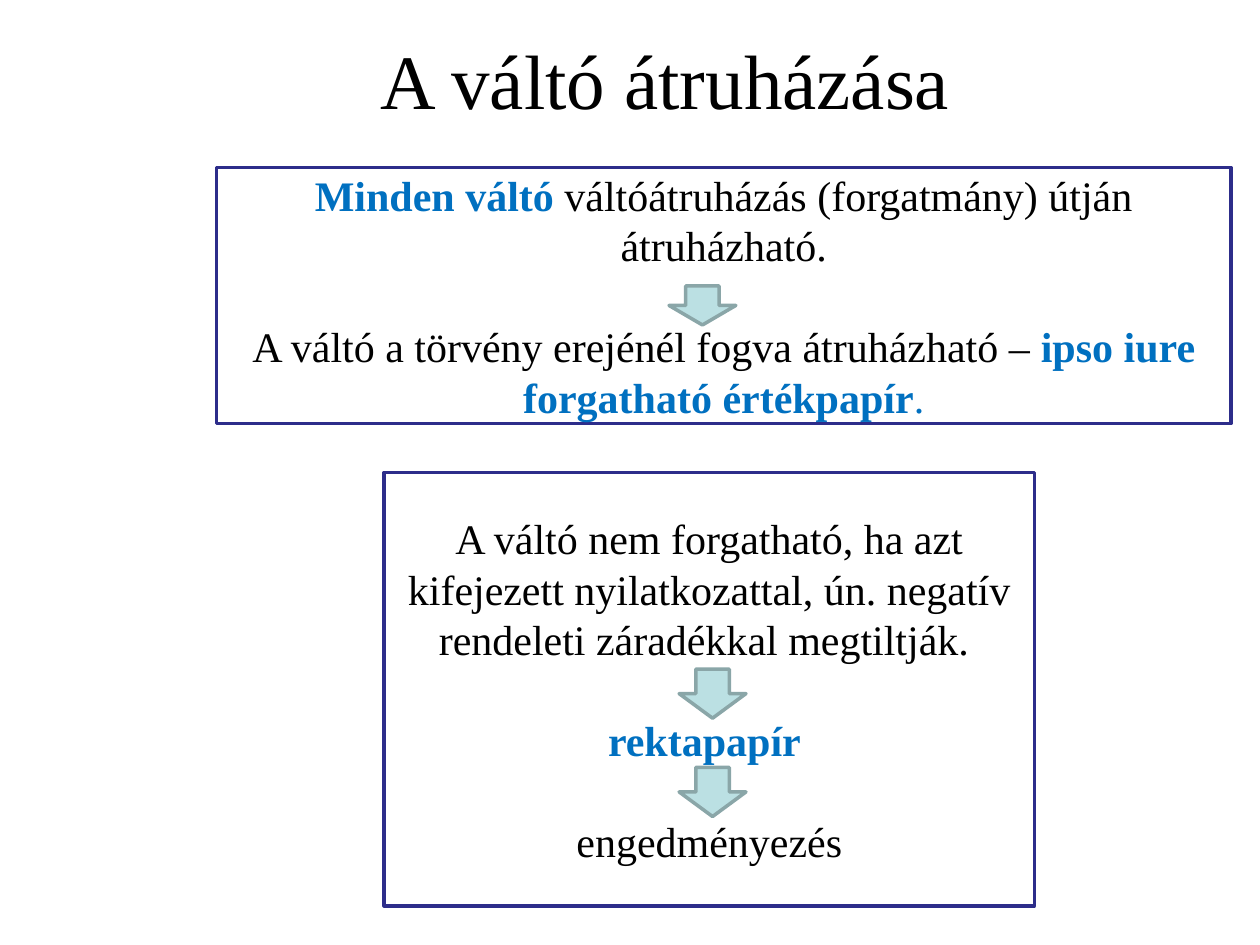
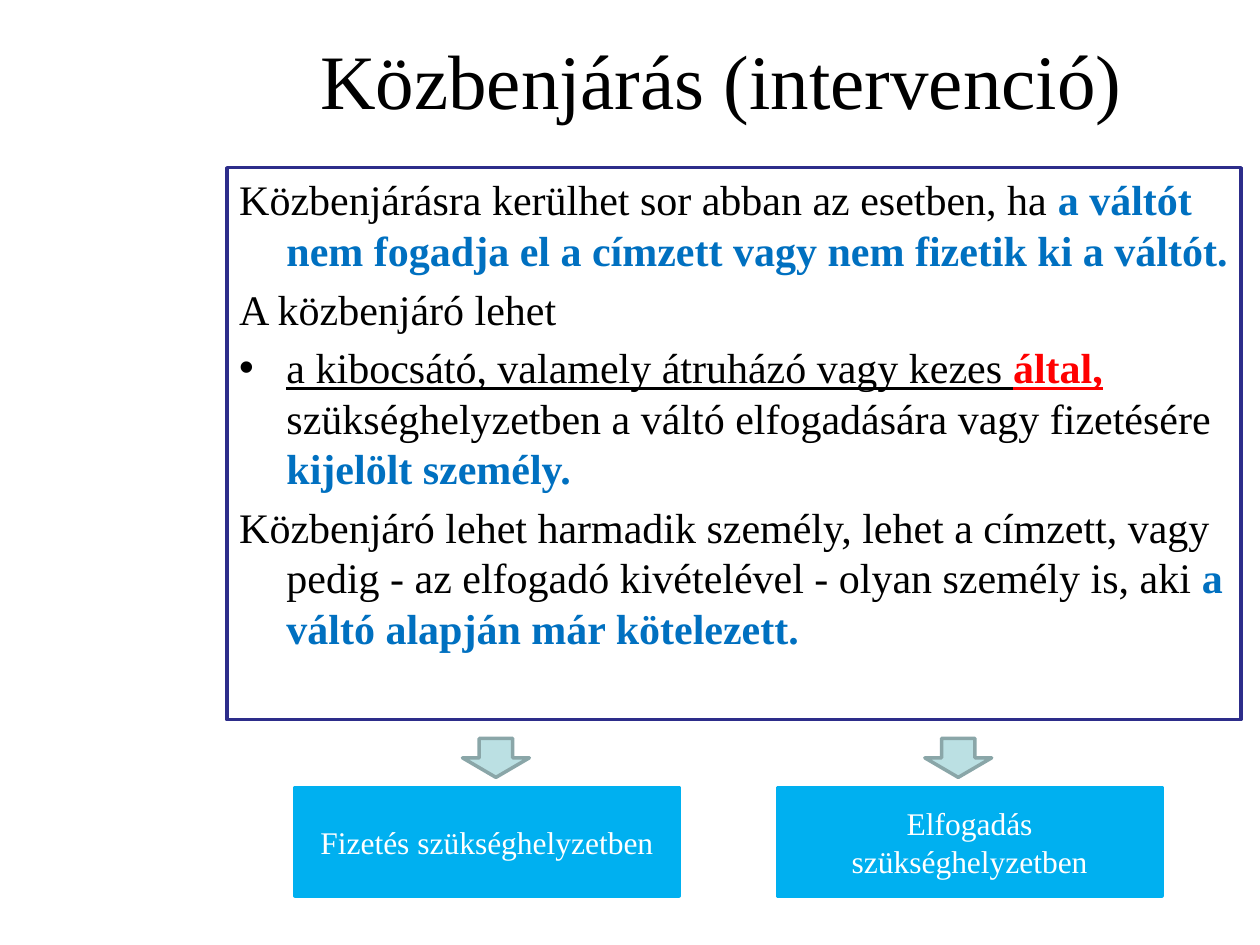
from pptx import Presentation
from pptx.dml.color import RGBColor
from pptx.enum.shapes import MSO_SHAPE as SHAPE
from pptx.enum.text import MSO_ANCHOR as ANCHOR, PP_ALIGN as ALIGN
from pptx.oxml import parse_xml
from pptx.oxml.ns import nsdecls
from pptx.util import Pt

FONT = "Times New Roman"
BLACK, WHITE, BLUE, RED = "000000", "FFFFFF", "0070C0", "FF0000"
NAVY, SKY = "2D2D8A", "00B0F0"
ARROW_FILL, ARROW_LINE = "BBE0E3", "8AA6A8"
ARROW_W = 38.2
LINE_GAP = 28.8
HANG = 27

# Run styles: colour, bold, underline
PLAIN = (BLACK, False, False)
KEY = (BLUE, True, False)
KEY_LIGHT = (BLUE, False, False)
UNDER = (BLACK, False, True)
ALERT = (RED, True, True)
LIGHT = (WHITE, False, False)


def rgb(value):
    return RGBColor.from_string(value)


def add_runs(p, runs, size):
    for text, (color, bold, underline) in runs:
        r = p.add_run()
        r.text = text
        r.font.name, r.font.size = FONT, Pt(size)
        r.font.bold, r.font.underline = bold, underline
        r.font.color.rgb = rgb(color)


def fill_text(sp, paragraphs, size, gap=0, align=ALIGN.CENTER, anchor=ANCHOR.MIDDLE):
    """Write paragraphs, each a list of (text, style), with gap points between."""
    tf = sp.text_frame
    tf.word_wrap = True
    tf.vertical_anchor = anchor
    for i, runs in enumerate(paragraphs):
        p = tf.add_paragraph() if i else tf.paragraphs[0]
        p.alignment = align
        p.space_before = Pt(gap if i else 0)
        add_runs(p, runs, size)
    return tf


def add_block(s, kind, box, fill, line):
    sp = s.shapes.add_shape(kind, *map(Pt, box))
    sp.shadow.inherit = False
    sp.fill.solid()
    sp.fill.fore_color.rgb = rgb(fill)
    sp.line.color.rgb = rgb(line)
    sp.line.width = Pt(2)
    return sp


def add_arrow(s, left, top, height):
    add_block(s, SHAPE.DOWN_ARROW, (left, top, ARROW_W, height), ARROW_FILL, ARROW_LINE)


def add_title(s, text, left, width):
    sp = s.shapes.add_textbox(Pt(left), Pt(0), Pt(width), Pt(90))
    fill_text(sp, [[(text, PLAIN)]], 44)


def add_statement(s, box, paragraphs, arrow_left, arrow_tops, arrow_height):
    """Framed statements linked by arrows, placed from the box's corner."""
    left, top = box[:2]
    sp = add_block(s, SHAPE.RECTANGLE, box, WHITE, NAVY)
    fill_text(sp, paragraphs, 24, LINE_GAP)
    for arrow_top in arrow_tops:
        add_arrow(s, left + arrow_left, top + arrow_top, arrow_height)


def add_body(s, box, paragraphs, bulleted):
    """Framed text with hanging indents; bulleted holds paragraph indexes."""
    sp = s.shapes.add_textbox(*map(Pt, box))
    sp.line.color.rgb = rgb(NAVY)
    sp.line.width = Pt(2)
    tf = fill_text(sp, paragraphs, 24, 4.8, ALIGN.LEFT, ANCHOR.TOP)
    for i, p in enumerate(tf.paragraphs):
        pPr = p._p.get_or_add_pPr()
        pPr.set("marL", str(Pt(HANG)))
        pPr.set("indent", str(-Pt(HANG)))
        if i in bulleted:
            pPr.append(parse_xml(f'<a:buFont {nsdecls("a")} typeface="Arial"/>'))
            pPr.append(parse_xml(f'<a:buChar {nsdecls("a")} char="•"/>'))


def add_outcomes(s, box, outcomes):
    """Row of buttons spread across the box, each below an arrow."""
    left, top, width, height = box
    button_w, button_h = 219.6, 61.9
    step = (width - button_w) / (len(outcomes) - 1)
    for i, (text, arrow_left) in enumerate(outcomes):
        x = left + i * step
        sp = add_block(s, SHAPE.RECTANGLE, (x, top + height - button_h, button_w, button_h),
                       SKY, SKY)
        fill_text(sp, [[(text, LIGHT)]], 18)
        add_arrow(s, x + arrow_left, top, 22.3)


def transfer_slide(s):
    add_title(s, "A váltó átruházása", 56.2, 648)
    add_statement(s, (123.8, 95.8, 579.6, 146.2), [
        [("Minden váltó ", KEY),
         ("váltóátruházás (forgatmány) útján átruházható.", PLAIN)],
        [("A váltó a törvény erejénél fogva átruházható – ", PLAIN),
         ("ipso iure forgatható értékpapír", KEY), (".", KEY_LIGHT)],
    ], 258.5, [67.6], 22.3)
    add_statement(s, (219.6, 270, 371.5, 247.7), [
        [("A váltó nem forgatható, ha azt kifejezett nyilatkozattal, ún. negatív "
          "rendeleti záradékkal megtiltják. ", PLAIN)],
        [("rektapapír ", KEY)],
        [("engedményezés", PLAIN)],
    ], 168.5, [112.3, 168.5], 28.1)


def intervention_slide(s):
    add_title(s, "Közbenjárás (intervenció)", 140.4, 543.6)
    add_body(s, (129.6, 95.8, 579.6, 315.4), [
        [("Közbenjárásra kerülhet sor abban az esetben, ha ", PLAIN),
         ("a váltót nem fogadja el a címzett vagy nem fizetik ki a váltót.", KEY)],
        [("A közbenjáró lehet", PLAIN)],
        [("a kibocsátó, valamely átruházó vagy kezes ", UNDER), ("által, ", ALERT),
         ("szükséghelyzetben a váltó elfogadására vagy fizetésére ", PLAIN),
         ("kijelölt személy.", KEY)],
        [("Közbenjáró lehet harmadik személy, lehet a címzett, vagy pedig - az elfogadó "
          "kivételével - olyan személy is, aki ", PLAIN),
         ("a váltó alapján már kötelezett.", KEY)],
    ], bulleted={2})
    add_outcomes(s, (168.5, 421.9, 495.4, 90), [
        ("Fizetés szükséghelyzetben", 95.8),
        ("Elfogadás szükséghelyzetben", 84.2),
    ])


def main():
    prs = Presentation()
    prs.slide_width, prs.slide_height = Pt(720), Pt(540)
    for build in (transfer_slide, intervention_slide):
        build(prs.slides.add_slide(prs.slide_layouts[6]))
    prs.save("out.pptx")


if __name__ == "__main__":
    main()
